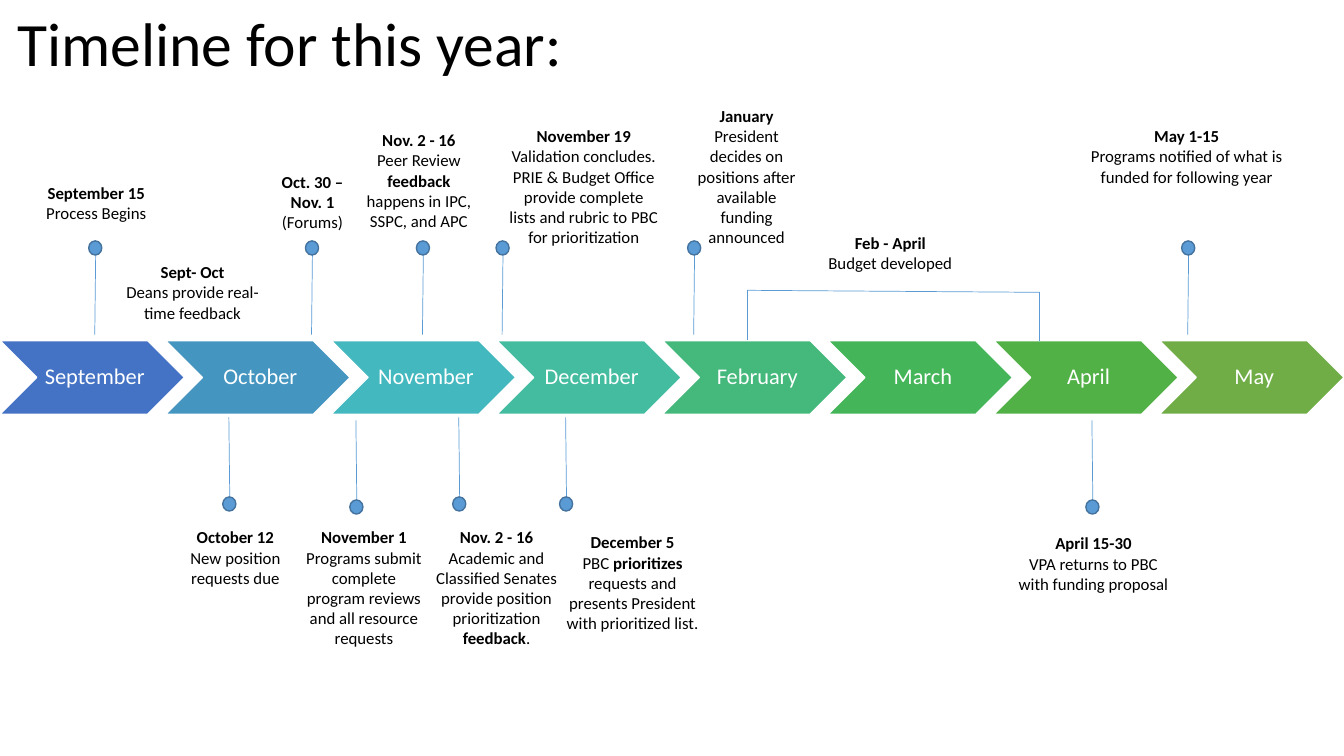
from dataclasses import dataclass

from lxml import etree
from pptx import Presentation
from pptx.dml.color import RGBColor
from pptx.enum.shapes import MSO_CONNECTOR, MSO_SHAPE
from pptx.enum.text import MSO_ANCHOR, MSO_AUTO_SIZE, PP_ALIGN
from pptx.oxml.ns import qn
from pptx.util import Inches, Pt

CHEVRON, OVAL = MSO_SHAPE.CHEVRON, MSO_SHAPE.OVAL
STRAIGHT = MSO_CONNECTOR.STRAIGHT
TOP, MIDDLE = MSO_ANCHOR.TOP, MSO_ANCHOR.MIDDLE
LEFT, CENTER = PP_ALIGN.LEFT, PP_ALIGN.CENTER
NO_FIT = MSO_AUTO_SIZE.NONE
SLIDE_W, SLIDE_H = 13.33, 7.5
TITLE_ONLY = 5
CHEVRON_W, CHEVRON_H, CHEVRON_TOP = 1.83, 0.73, 3.38
DOT_W, DOT_H = 0.13, 0.14


@dataclass(frozen=True)
class Theme:
    font: str = "Calibri"
    text: str = "000000"
    light: str = "FFFFFF"
    pin: str = "5B9BD5"
    dot_edge: str = "43739E"
    title_size: int = 44
    month_size: int = 16
    note_size: int = 12
    edge_width: float = 1
    pin_width: float = 0.5


MONTHS = [
    ("September", "4472C4"), ("October", "4496C1"),
    ("November", "43B8BF"), ("December", "43BCA0"),
    ("February", "44B97B"), ("March", "45B559"),
    ("April", "52B146"), ("May", "70AD47"),
]

PINS_ABOVE = [0.88, 3.03, 4.13, 4.92, 6.82, 11.72]
PINS_BELOW = [(2.21, 4.93), (3.47, 4.96), (4.49, 4.93), (5.55, 4.93), (10.77, 4.96)]
BRACKET = [(7.41, 3.37), (7.41, 2.88), (10.31, 2.9), (10.31, 3.38)]

NOTES = [
    (0.26, 1.76, 1.39, 0.5, ["*September 15*", "Process Begins"]),
    (1.15, 2.55, 1.52, 0.71, ["*Sept- Oct*", "Deans provide real-time feedback"]),
    (2.62, 1.65, 0.96, 0.71, ["*Oct. 30 –*", "*Nov. 1*", "(Forums)"]),
    (3.46, 1.24, 1.39, 1.11,
     ["*Nov. 2 - 16*", "Peer Review *feedback* happens in IPC, SSPC, and APC"]),
    (4.95, 1.2, 1.68, 1.31,
     ["*November 19*", "Validation concludes. PRIE & Budget Office provide complete "
      "lists and rubric to PBC for prioritization"]),
    (6.75, 1, 1.31, 1.51,
     ["*January*", "President decides on positions after available funding announced"]),
    (7.74, 2.26, 2.18, 0.5, ["*Feb - April*", "Budget developed"]),
    (10.68, 1.2, 2.18, 0.71,
     ["*May 1-15*", "Programs notified of what is funded for following year"]),
    (1.76, 5.18, 1.15, 0.71, ["*October 12*", "New position requests due"]),
    (2.91, 5.18, 1.4, 1.31,
     ["*November 1*", "Programs submit complete program reviews and all resource requests"]),
    (4.08, 5.18, 1.69, 1.31,
     ["*Nov. 2 - 16*", "Academic and Classified Senates provide position "
      "prioritization *feedback*."]),
    (5.46, 5.23, 1.63, 1.11,
     ["*December 5*", "PBC *prioritizes* requests and presents President "
      "with prioritized list."]),
    (10, 5.24, 1.69, 0.71, ["*April 15-30*", "VPA returns to PBC with funding proposal"]),
]


class TimelineSlide:
    def __init__(self, prs, theme):
        self.theme = theme
        self.s = prs.slides.add_slide(prs.slide_layouts[TITLE_ONLY])

    def fill_text(self, tf, lines, size, color, align=CENTER, spacing=1.0, **frame):
        settings = {"word_wrap": True, "auto_size": NO_FIT, "vertical_anchor": TOP, **frame}
        for name, value in settings.items():
            setattr(tf, name, value)
        for i, line in enumerate(lines):
            p = tf.paragraphs[0] if i == 0 else tf.add_paragraph()
            p.alignment, p.line_spacing = align, spacing
            for j, text in enumerate(line.split("*")):
                if text:
                    r = p.add_run()
                    r.text = text
                    r.font.color.rgb = RGBColor.from_string(color)
                    font = {"name": self.theme.font, "size": Pt(size), "bold": j % 2 == 1}
                    for name, value in font.items():
                        setattr(r.font, name, value)

    def title(self, x, y, w, h, text):
        sp = self.s.shapes.title
        box = {"left": x, "top": y, "width": w, "height": h}
        for name, value in box.items():
            setattr(sp, name, Inches(value))
        self.fill_text(sp.text_frame, [text], self.theme.title_size, self.theme.text, LEFT, 0.9)

    def shape(self, kind, x, y, w, h, fill, edge):
        sp = self.s.shapes.add_shape(kind, Inches(x), Inches(y), Inches(w), Inches(h))
        sp.shadow.inherit = False
        sp.fill.solid()
        sp.fill.fore_color.rgb = RGBColor.from_string(fill)
        sp.line.color.rgb = RGBColor.from_string(edge)
        sp.line.width = Pt(self.theme.edge_width)
        return sp

    def month(self, x, name, fill):
        sp = self.shape(CHEVRON, x, CHEVRON_TOP, CHEVRON_W, CHEVRON_H, fill, self.theme.light)
        small = Inches(0.02)
        self.fill_text(sp.text_frame, [name], self.theme.month_size, self.theme.light,
                       spacing=0.9, vertical_anchor=MIDDLE, margin_left=Inches(0.07),
                       margin_right=small, margin_top=small, margin_bottom=small)

    def line(self, start, end):
        c = self.s.shapes.add_connector(STRAIGHT, *[Inches(v) for v in (*start, *end)])
        c.line.color.rgb = RGBColor.from_string(self.theme.pin)
        c.line.width = Pt(self.theme.pin_width)
        etree.SubElement(c._element.spPr, qn("a:effectLst"))

    def pin(self, x, dot_top, line_start, line_end):
        self.line((x + 0.06, line_start), (x + 0.07, line_end))
        self.shape(OVAL, x, dot_top, DOT_W, DOT_H, self.theme.pin, self.theme.dot_edge)

    def note(self, x, y, w, h, lines):
        sp = self.s.shapes.add_textbox(Inches(x), Inches(y), Inches(w), Inches(h))
        self.fill_text(sp.text_frame, lines, self.theme.note_size, self.theme.text)


def main():
    prs = Presentation()
    prs.slide_width, prs.slide_height = Inches(SLIDE_W), Inches(SLIDE_H)
    s = TimelineSlide(prs, Theme())
    s.title(0.07, 0.08, 9.15, 2.6, "Timeline for this year:")
    pitch = (SLIDE_W - CHEVRON_W) / (len(MONTHS) - 1)
    for i, (name, fill) in enumerate(MONTHS):
        s.month(i * pitch, name, fill)
    for x in PINS_ABOVE:
        s.pin(x, 2.39, 3.32, 2.43)
    for x, dot_top in PINS_BELOW:
        s.pin(x, dot_top, dot_top - 0.79, dot_top + 0.1)
    for start, end in zip(BRACKET, BRACKET[1:]):
        s.line(start, end)
    for note in NOTES:
        s.note(*note)
    prs.save("out.pptx")


if __name__ == "__main__":
    main()
